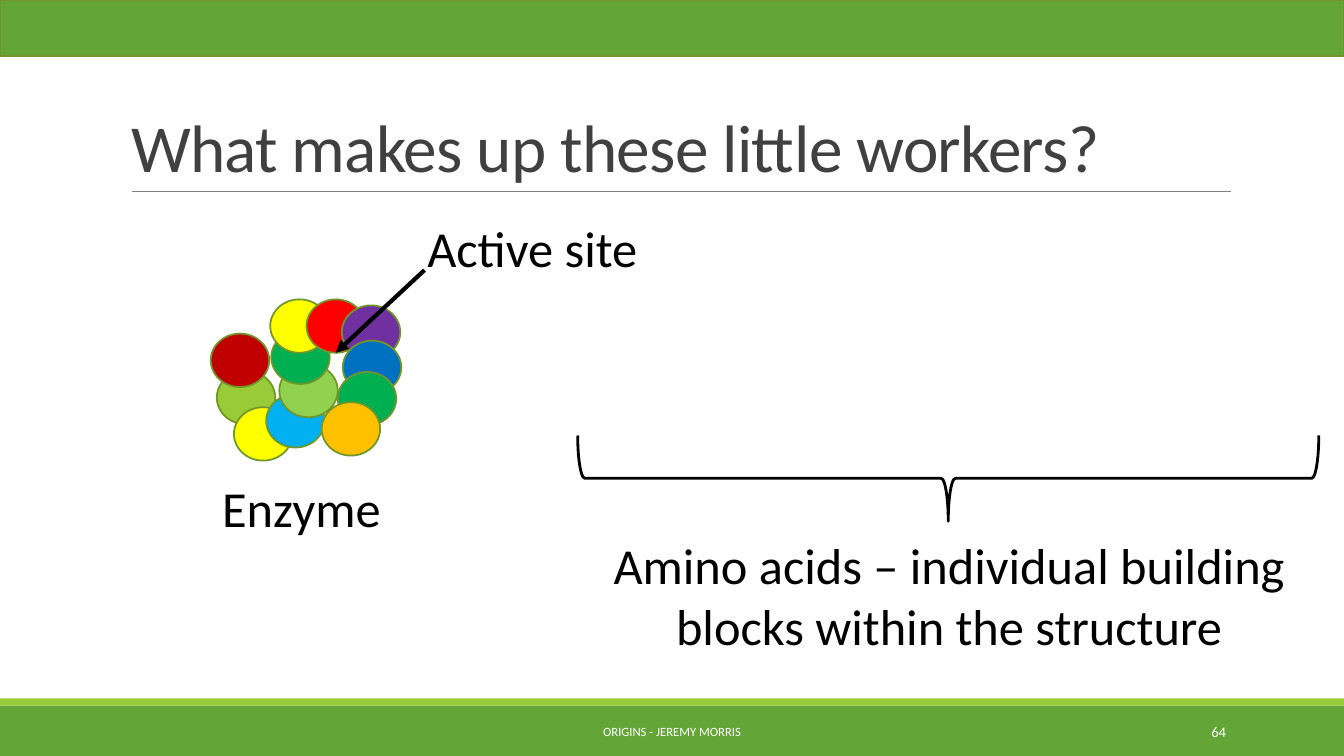
from lxml import etree
from pptx import Presentation
from pptx.dml.color import RGBColor
from pptx.enum.shapes import MSO_CONNECTOR, MSO_SHAPE
from pptx.enum.text import MSO_ANCHOR, MSO_AUTO_SIZE, PP_ALIGN
from pptx.oxml.ns import qn
from pptx.util import Inches, Pt

RECTANGLE, OVAL, LEFT_BRACE = MSO_SHAPE.RECTANGLE, MSO_SHAPE.OVAL, MSO_SHAPE.LEFT_BRACE
STRAIGHT = MSO_CONNECTOR.STRAIGHT
TOP, MIDDLE, BOTTOM = MSO_ANCHOR.TOP, MSO_ANCHOR.MIDDLE, MSO_ANCHOR.BOTTOM
LEFT, CENTER, RIGHT = PP_ALIGN.LEFT, PP_ALIGN.CENTER, PP_ALIGN.RIGHT
NO_AUTOFIT = MSO_AUTO_SIZE.NONE

FONT = "Calibri"
GREEN, LIME, OLIVE = "63A537", "99CB38", "719629"
BLACK, WHITE = "000000", "FFFFFF"
SLIDE_WIDTH, SLIDE_HEIGHT = 13.33, 7.5
ACID_WIDTH, ACID_HEIGHT = 0.58, 0.53

AMINO_ACIDS = [
    (0.06, 0.71, LIME),
    (0.23, 1.07, "FFFF00"),
    (0.55, 0.94, "00B0F0"),
    (0.68, 0.64, "92D050"),
    (0.6, 0.31, "00B050"),
    (0.59, 0, "FFFF00"),
    (0.95, 0, "FF0000"),
    (1.3, 0.06, "7030A0"),
    (1.31, 0.41, "0070C0"),
    (1.26, 0.72, "00B050"),
    (1.1, 1.02, "FFC000"),
    (0, 0.34, "C00000"),
]


def color(value):
    return RGBColor.from_string(value)


def format_text(shape, text, size, fill=BLACK, align=CENTER, anchor=TOP):
    frame = shape.text_frame
    frame.word_wrap = True
    frame.auto_size = NO_AUTOFIT
    frame.vertical_anchor = anchor
    frame.text = text
    paragraph = frame.paragraphs[0]
    paragraph.alignment = align
    font = paragraph.runs[0].font
    font.name, font.size = FONT, Pt(size)
    font.color.rgb = color(fill)
    return paragraph


def add_text(slide, box, text, size, **options):
    shape = slide.shapes.add_textbox(*map(Inches, box))
    format_text(shape, text, size, **options)


def add_shape(slide, kind, box, fill=None, line=None, width=1.25):
    shape = slide.shapes.add_shape(kind, *map(Inches, box))
    shape.shadow.inherit = False
    if fill:
        shape.fill.solid()
        shape.fill.fore_color.rgb = color(fill)
    else:
        shape.fill.background()
    if line:
        shape.line.color.rgb = color(line)
        shape.line.width = Pt(width)
    else:
        shape.line.fill.background()
    return shape


def add_line(slide, start, end, line, width, arrow=False):
    connector = slide.shapes.add_connector(STRAIGHT, *map(Inches, start + end))
    connector.line.color.rgb = color(line)
    connector.line.width = Pt(width)
    properties = connector._element.spPr
    if arrow:
        etree.SubElement(properties.find(qn("a:ln")), qn("a:tailEnd"), type="triangle")
    etree.SubElement(properties, qn("a:effectLst"))


def add_header(slide, box):
    left, top, width, height = box
    add_shape(slide, RECTANGLE, (0, 0, SLIDE_WIDTH, 0.56), GREEN, OLIVE)
    title = slide.shapes.title
    title.left, title.top, title.width, title.height = map(Inches, box)
    paragraph = format_text(title, "What makes up these little workers?", 48,
                            fill="404040", align=LEFT, anchor=BOTTOM)
    paragraph.line_spacing = 0.85
    paragraph.runs[0].font._element.set("spc", "-50")
    bottom = top + height
    add_line(slide, (left + 0.11, bottom), (left + width + 0.01, bottom), "808080", 0.5)


def add_footer(slide, box):
    left, top, width, height = box
    add_shape(slide, RECTANGLE, box, GREEN)
    add_shape(slide, RECTANGLE, (left, top - 0.07, width, 0.07), LIME)
    add_text(slide, (left + 4.03, top + 0.06, 5.27, 0.4), "ORIGINS - JEREMY MORRIS", 9,
             fill=WHITE, anchor=MIDDLE)
    add_text(slide, (left + 10.83, top + 0.06, 1.43, 0.4), "64", 10.5,
             fill=WHITE, align=RIGHT, anchor=MIDDLE)


def add_enzyme(slide, left, top):
    for across, down, fill in AMINO_ACIDS:
        acid_box = (left + across, top + down, ACID_WIDTH, ACID_HEIGHT)
        add_shape(slide, OVAL, acid_box, fill, OLIVE)
    add_text(slide, (left - 0.32, top + 1.71, 2.44, 0.71), "Enzyme", 36)


def add_building_blocks(slide, box):
    left, top, width, height = box
    depth = 0.85
    brace_box = (left + (width - depth) / 2, top + (depth - width) / 2, depth, width)
    brace = add_shape(slide, LEFT_BRACE, brace_box, line=BLACK, width=2)
    brace.rotation = 270
    label_top = top + depth + 0.08
    add_text(slide, (left + 0.11, label_top, width - 0.2, top + height - label_top),
             "Amino acids – individual building blocks within the structure", 36)


def add_active_site(slide, box):
    left, top, width, height = box
    add_text(slide, box, "Active site", 36)
    add_line(slide, (left + 0.15, top + 0.58), (left - 0.73, top + 1.4), BLACK, 3, arrow=True)


def main():
    presentation = Presentation()
    presentation.slide_width = Inches(SLIDE_WIDTH)
    presentation.slide_height = Inches(SLIDE_HEIGHT)
    slide = presentation.slides.add_slide(presentation.slide_layouts[5])
    slide.background.fill.solid()
    slide.background.fill.fore_color.rgb = color(WHITE)
    add_header(slide, (1.2, 0.31, 11, 1.59))
    add_footer(slide, (0, 7, SLIDE_WIDTH, 0.5))
    add_enzyme(slide, 2.09, 2.97)
    add_building_blocks(slide, (5.73, 4.32, 7.35, 2.24))
    add_active_site(slide, (4.06, 2.1, 2.44, 0.71))
    presentation.save("out.pptx")


if __name__ == "__main__":
    main()
